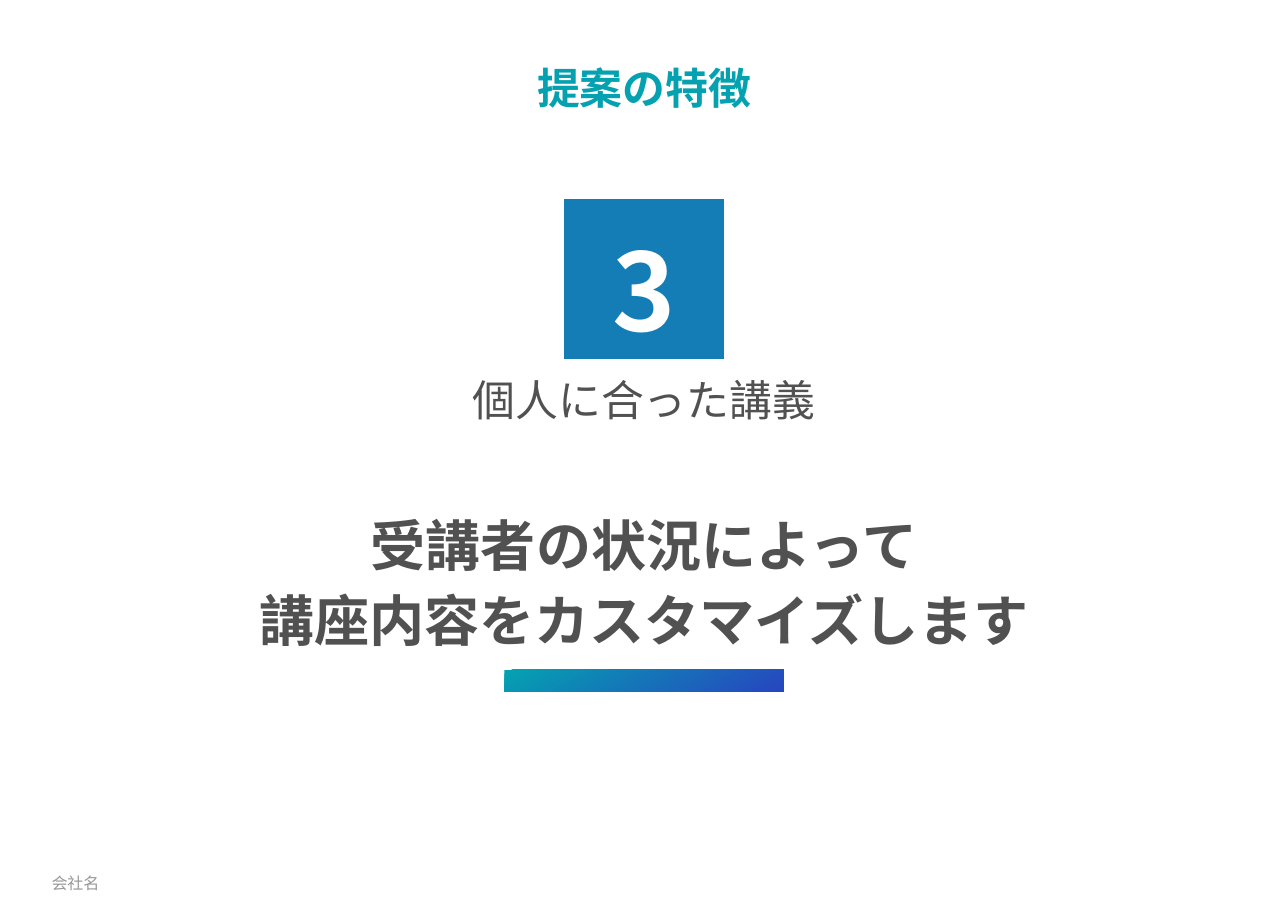
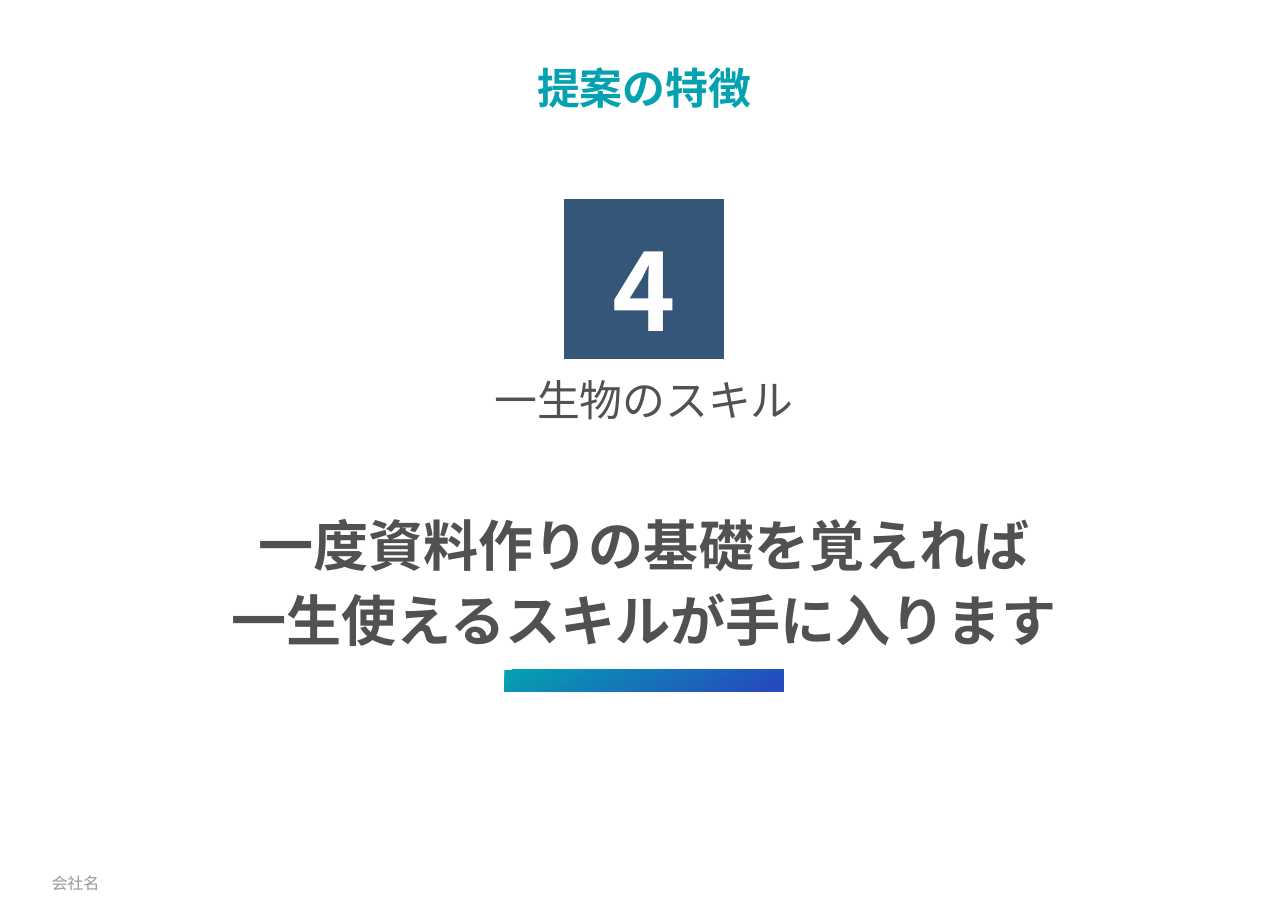
"""Build two slides that present numbered features of a training proposal."""
from lxml.etree import SubElement
from pptx import Presentation
from pptx.dml.color import RGBColor
from pptx.enum.shapes import MSO_SHAPE
from pptx.enum.text import MSO_ANCHOR, PP_ALIGN
from pptx.oxml.ns import qn
from pptx.util import Pt

PAGE_WIDTH, PAGE_HEIGHT = 841.7, 595.4
TEAL = RGBColor(0x04, 0xA2, 0xB1)
INDIGO = RGBColor(0x27, 0x46, 0xC0)
BLUE = RGBColor(0x14, 0x7D, 0xB6)
NAVY = RGBColor(0x35, 0x56, 0x79)
DARK_GRAY = RGBColor(0x51, 0x51, 0x51)
LIGHT_GRAY = RGBColor(0x98, 0x98, 0x98)
WHITE = RGBColor(0xFF, 0xFF, 0xFF)
JAPANESE_FONT = "Noto Sans CJK JP"
LATIN_FONT = "Calibri"

TITLE = "提案の特徴"
FOOTER = "会社名"
FEATURES = [
    ("3", BLUE, "個人に合った講義",
     ["受講者の状況によって", "講座内容をカスタマイズします"]),
    ("4", NAVY, "一生物のスキル",
     ["一度資料作りの基礎を覚えれば", "一生使えるスキルが手に入ります"]),
]


def centered_left(width):
    """Return the left edge that centres an element on the page."""
    return (PAGE_WIDTH - width) / 2


def write_text(shape, lines, size, color, bold=False, font=JAPANESE_FONT,
               align=PP_ALIGN.CENTER, insets=(7.2, 3.6, 7.2, 3.6),
               space_after=0, line_spacing=1.0):
    """Fill a shape with vertically centred, formatted lines of text."""
    frame = shape.text_frame
    frame.word_wrap = True
    frame.vertical_anchor = MSO_ANCHOR.MIDDLE
    frame.margin_left, frame.margin_top, frame.margin_right, frame.margin_bottom = map(Pt, insets)
    frame.text = "\n".join(lines)
    for para in frame.paragraphs:
        para.alignment = align
        para.space_after = Pt(space_after)
        para.line_spacing = line_spacing
        for span in para.runs:
            span.font.name = font
            span.font.size = Pt(size)
            span.font.bold = bold
            span.font.color.rgb = color
            SubElement(span.font._element, qn("a:ea"), typeface=JAPANESE_FONT)


def add_text(page, left, top, width, height, lines, size, color, **style):
    """Add a text box."""
    box = page.shapes.add_textbox(Pt(left), Pt(top), Pt(width), Pt(height))
    write_text(box, lines, size, color, **style)


def add_centered_text(page, top, width, height, lines, size, color, **style):
    """Add a text box centred on the page."""
    add_text(page, centered_left(width), top, width, height, lines, size, color, **style)


def add_centered_rectangle(page, top, width, height):
    """Add a borderless rectangle centred on the page."""
    rectangle = page.shapes.add_shape(
        MSO_SHAPE.RECTANGLE, Pt(centered_left(width)), Pt(top), Pt(width), Pt(height))
    rectangle.shadow.inherit = False
    rectangle.line.fill.background()
    return rectangle


def add_number_badge(page, number, color):
    """Add the coloured square that holds the feature number."""
    badge = add_centered_rectangle(page, 130.2, 104.4, 104.4)
    badge.fill.solid()
    badge.fill.fore_color.rgb = color
    write_text(badge, [number], 70.2, WHITE, bold=True, insets=(6.5, 15.1, 6.5, 2.9))


def add_gradient_bar(page):
    """Add the accent bar under the message."""
    bar = add_centered_rectangle(page, 437.8, 182.4, 14)
    bar.fill.gradient()
    bar.fill.gradient_angle = 300
    for stop, color in zip(bar.fill.gradient_stops, (TEAL, INDIGO)):
        stop.color.rgb = color


def add_feature_page(deck, number, color, caption, message):
    """Add one feature slide with the shared title, footer and accent bar."""
    page = deck.slides.add_slide(deck.slide_layouts[6])
    body_style = {"insets": (7.2, 5, 7.2, 3.6), "space_after": 6}
    add_centered_text(page, 33.8, PAGE_WIDTH, 43.2, [TITLE], 28, TEAL,
                      bold=True, line_spacing=1.1)
    add_text(page, 26.6, 561.6, 248.4, 31.7, [FOOTER], 10.5, LIGHT_GRAY,
             font=LATIN_FONT, align=PP_ALIGN.LEFT)
    add_number_badge(page, number, color)
    add_centered_text(page, 234.7, 248.4, 51.8, [caption], 28, DARK_GRAY, **body_style)
    add_centered_text(page, 297.4, 607, 164.2, message, 36, DARK_GRAY,
                      bold=True, **body_style)
    add_gradient_bar(page)


def main():
    """Create and save the deck."""
    deck = Presentation()
    deck.slide_width, deck.slide_height = Pt(PAGE_WIDTH), Pt(PAGE_HEIGHT)
    for feature in FEATURES:
        add_feature_page(deck, *feature)
    deck.save("out.pptx")


if __name__ == "__main__":
    main()
